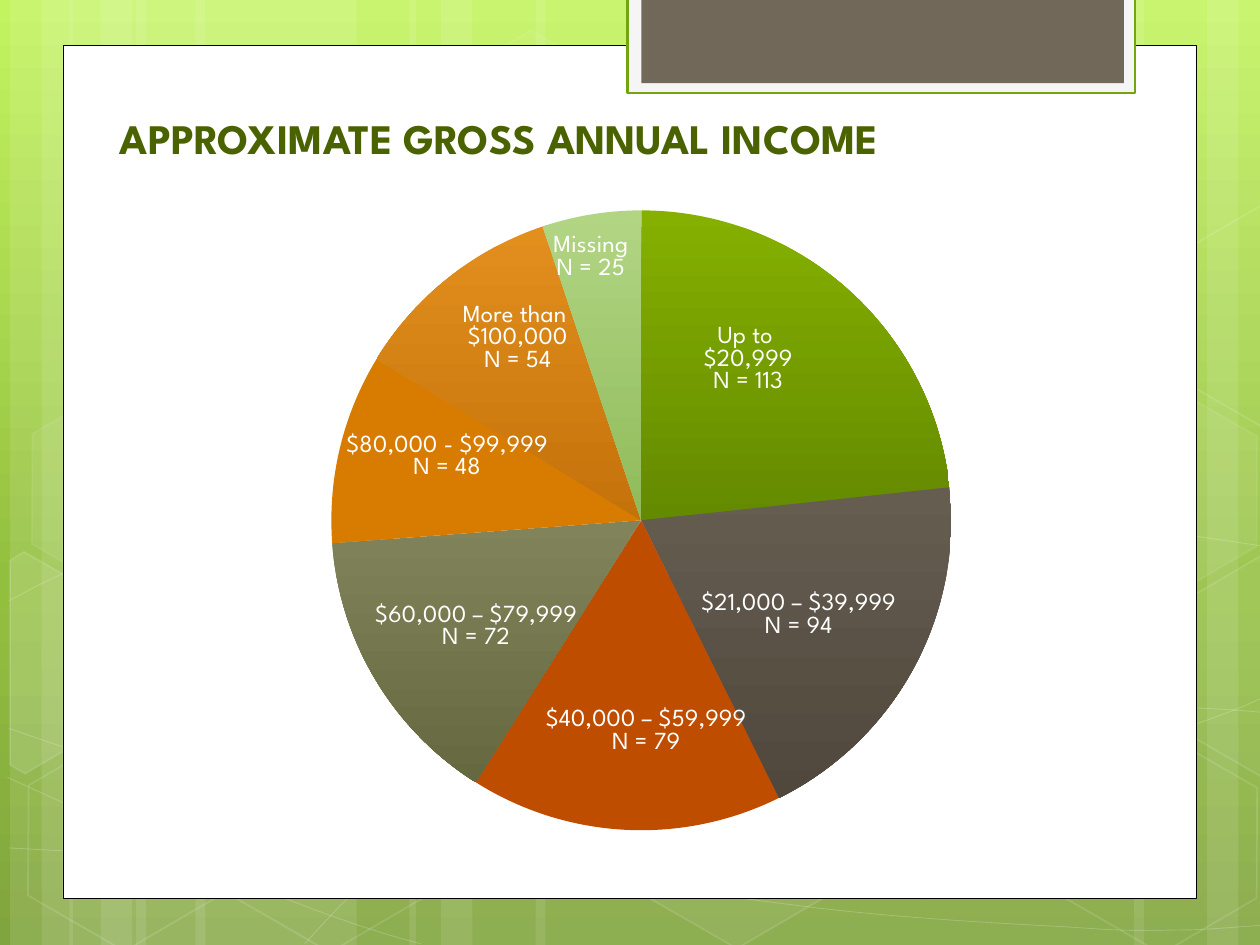
from copy import deepcopy
from itertools import accumulate
from math import cos, pi, sin
from pptx import Presentation, util as u
from pptx.chart.data import CategoryChartData
from pptx.dml.color import RGBColor
from pptx.enum import chart as ch, shapes, text
from pptx.oxml import parse_xml
from pptx.oxml.ns import nsdecls, qn

THEME = dict(font="League Spartan", title="4A6300", white="FFFFFF", black="000000",
             tab="71685A", tab_frame="F5F5F5", tab_line="74A510",
             background=[(0, "C3F35F"), (0.62, "93BF3F"), (1, "81A53E")],
             title_size=24, label_size=14, chart_size=10)
TITLE = "APPROXIMATE GROSS ANNUAL INCOME"

# category, count, label heading, slice colours top to bottom, label centre in inches
INCOME = [
    ("Up to $20,999", 113, "Up to \n$20,999", ["85B000", "648A00"], (5.94, 2.86)),
    ("$21,000 – $39,999", 94, "$21,000 – $39,999", ["665D51", "50483C"], (6.34, 4.89)),
    ("$40,000 – $59,999", 79, "$40,000 – $59,999", ["BF4D00"], (5.13, 5.81)),
    ("$60,000 – $79,999", 72, "$60,000 – $79,999", ["81845A", "666840"], (3.78, 4.98)),
    ("$80,000 - $99,999", 48, "$80,000 - $99,999", ["D77C01"], (3.55, 3.63)),
    ("More than $100,000", 54, "More than \n$100,000", ["E28F1E", "C4720A"], (4.11, 2.69)),
    ("Missing", 25, "Missing", ["B2D584", "90BB5A"], (4.69, 2.05)),
]
CHART_BOX = (0.17, 1.33, 9.67, 5.92)
PIE_CENTRE, PIE_RADIUS = (5.09, 4.13), 2.46

# left, width
STRIPES = [(1.08, 1.75), (0.08, 0.5), (0.33, 0.83), (1.55, 1.75), (0.55, 0.5), (0.8, 0.83),
           (7.33, 1.75), (9.58, 0.5), (9, 0.83), (4.25, 3.08), (3.25, 0.5), (3.5, 0.83)]
# start point, then cubic pieces: two control points and an end point
WAVES = [
    [(0.07, 6.73), (0.61, 6.76, 1.15, 6.79, 1.9, 6.78), (2.65, 6.77, 3.58, 6.75, 4.58, 6.65),
     (5.58, 6.55, 7, 6.36, 7.92, 6.17), (8.83, 5.98, 9.77, 5.68, 10.07, 5.51)],
    [(0.07, 4.77), (0.36, 4.61, 0.65, 4.46, 1.21, 4.31), (1.78, 4.16, 2.59, 3.94, 3.47, 3.87),
     (4.36, 3.8, 5.44, 3.79, 6.54, 3.87), (7.64, 3.95, 9.47, 4.26, 10.07, 4.34)],
    [(0.06, 6.17), (1.27, 6.72, 2.47, 7.27, 3.34, 7.49)],
    [(0.07, 5.78), (0.38, 5.89, 0.7, 6, 1.28, 6.16), (1.86, 6.31, 2.73, 6.56, 3.57, 6.73),
     (4.4, 6.9, 5.45, 7.08, 6.28, 7.18), (7.11, 7.29, 8, 7.33, 8.53, 7.36),
     (9.05, 7.4, 9.19, 7.38, 9.45, 7.38), (9.71, 7.37, 9.89, 7.35, 10.07, 7.34)],
    [(2.42, 7.49), (2.6, 7.29, 2.78, 7.09, 3.02, 6.91), (3.26, 6.73, 3.6, 6.53, 3.88, 6.39),
     (4.16, 6.25, 4.33, 6.19, 4.7, 6.09), (5.06, 5.99, 5.73, 5.85, 6.08, 5.78),
     (6.44, 5.71, 6.49, 5.71, 6.8, 5.69), (7.11, 5.66, 7.6, 5.63, 7.94, 5.62),
     (8.29, 5.61, 8.86, 5.62, 8.86, 5.62), (9.08, 5.62, 9.31, 5.62, 9.53, 5.62),
     (9.71, 5.63, 9.88, 5.64, 9.97, 5.65), (10.06, 5.66, 10.03, 5.65, 10.06, 5.66)],
]
# left, top, fill opacity, line opacity (percent)
HEXAGONS = [(3.34, 0.36, 4, 8), (4.97, 5.89, 6, 12), (0.11, 5.91, 0, 12), (0.14, 3.12, 7, 8),
            (1.74, 5.92, 0, 12), (7.53, 4.53, 10, 12), (8.34, 5.93, 0, 12), (8.34, 3.14, 7, 8)]
# outline, fill opacity
CUT_HEXAGONS = [
    ([(0.08, 4.45), (0.19, 4.38), (0.96, 4.82), (0.95, 5.7), (0.2, 6.14), (0.08, 6.07)], 10),
    ([(9.26, 4.85), (10.01, 4.41), (10.09, 4.46), (10.09, 6.13), (10.02, 6.17), (9.26, 5.73)], 4),
    ([(9.26, 2.07), (10.01, 1.63), (10.1, 1.68), (10.09, 3.35), (10.02, 3.39), (9.26, 2.95)], 0),
]
# box, fill, line colour, line width
PANELS = [((0.5, 0.36, 9, 6.77), "white", "black", 0.5),
          ((4.98, -0.02, 4.03, 0.76), "tab_frame", "tab_line", 1.25),
          ((5.09, -0.02, 3.83, 0.68), "tab", None, 0)]


def inches(values):
    return [u.Inches(v) for v in values]


def paint(fill, color, opacity=100):
    if not opacity:
        fill.background()
        return
    fill.solid()
    fill.fore_color.rgb = RGBColor.from_string(color)
    if opacity < 100:
        clr = fill._xPr.find(".//" + qn("a:srgbClr"))
        clr.append(parse_xml(f'<a:alpha {nsdecls("a")} val="{opacity * 1000}"/>'))


def paint_down(fill, stops):
    """Fill with a gradient from top to bottom; stops are (position, colour)."""
    fill.gradient()
    fill.gradient_angle = 270
    gs_list = fill._xPr.find(".//" + qn("a:gsLst"))
    for _ in stops[2:]:
        gs_list.append(deepcopy(gs_list[0]))
    for stop, (position, color) in zip(fill.gradient_stops, stops):
        stop.position = position
        stop.color.rgb = RGBColor.from_string(color)


def style(sp, fill, fill_opacity, line, width, line_opacity=100):
    sp.shadow.inherit = False
    paint(sp.fill, fill, fill_opacity)
    if line:
        paint(sp.line.fill, line, line_opacity)
        sp.line.width = u.Pt(width)
    else:
        sp.line.fill.background()


def add_outline(s, points, close):
    points = [inches(p) for p in points]
    builder = s.shapes.build_freeform(*points[0], scale=1)
    builder.add_line_segments(points[1:], close=close)
    return builder.convert_to_shape()


def add_wave(s, wave):
    """Lay out all control points as a polyline, then join each three into a cubic curve."""
    points = wave[:1] + [piece[i:i + 2] for piece in wave[1:] for i in (0, 2, 4)]
    sp = add_outline(s, points, False)
    lines = list(sp._element.iter(qn("a:lnTo")))
    for first, second, third in zip(lines[::3], lines[1::3], lines[2::3]):
        curve = parse_xml(f'<a:cubicBezTo {nsdecls("a")}/>')
        first.addprevious(curve)
        for line in (first, second, third):
            curve.append(line[0])
            line.getparent().remove(line)
    return sp


def add_decor(s):
    white = THEME["white"]
    paint_down(s.background.fill, THEME["background"])
    for left, width in STRIPES:
        sp = s.shapes.add_shape(shapes.MSO_SHAPE.RECTANGLE, *inches((left, 0, width, 7.5)))
        style(sp, white, 10, None, 0)
    for wave in WAVES:
        style(add_wave(s, wave), white, 0, white, 0.5, 20)
    for left, top, opacity, line_opacity in HEXAGONS:
        sp = s.shapes.add_shape(shapes.MSO_SHAPE.HEXAGON, *inches((left, top, 1.75, 1.52)))
        sp.adjustments[0] = 0.285
        sp.rotation = 30
        style(sp, white, opacity, white, 1, line_opacity)
    for outline, opacity in CUT_HEXAGONS:
        style(add_outline(s, outline, True), white, opacity, white, 1, 12)
    for box, fill, line, width in PANELS:
        sp = s.shapes.add_shape(shapes.MSO_SHAPE.RECTANGLE, *inches(box))
        style(sp, THEME[fill], 100, THEME.get(line), width)


def set_font(font, size, color):
    font.name, font.size = THEME["font"], u.Pt(size)
    font.color.rgb = RGBColor.from_string(color)


def add_title(s):
    tf = s.shapes.add_textbox(*inches((0.17, 0.59, 7.58, 0.75))).text_frame
    tf.word_wrap = True
    tf.vertical_anchor = text.MSO_ANCHOR.BOTTOM
    p = tf.paragraphs[0]
    p.text, p.alignment = TITLE, text.PP_ALIGN.CENTER
    set_font(p.font, THEME["title_size"], THEME["title"])
    p.font.bold = True


def manual_layout(**settings):
    items = "".join(f'<c:{name} val="{value}"/>' for name, value in settings.items())
    return parse_xml(f'<c:layout {nsdecls("c")}><c:manualLayout>{items}</c:manualLayout></c:layout>')


def add_label(point, content, centre, angle):
    """Place a label by its offset from the middle of the slice."""
    dl = point.data_label
    dl.text_frame.text = content
    for p in dl.text_frame.paragraphs:
        for r in p.runs:
            set_font(r.font, THEME["label_size"], THEME["white"])
    dl.position = ch.XL_LABEL_POSITION.CENTER
    x = PIE_CENTRE[0] + PIE_RADIUS / 2 * sin(angle)
    y = PIE_CENTRE[1] - PIE_RADIUS / 2 * cos(angle)
    dl._dLbl.insert(1, manual_layout(x=round((centre[0] - x) / CHART_BOX[2], 4),
                                     y=round((centre[1] - y) / CHART_BOX[3], 4)))


def add_pie(s):
    counts = [row[1] for row in INCOME]
    data = CategoryChartData()
    data.categories = [row[0] for row in INCOME]
    data.add_series("Series 1", counts)
    chart = s.shapes.add_chart(ch.XL_CHART_TYPE.PIE, *inches(CHART_BOX), data).chart
    chart.has_legend = chart.has_title = False
    set_font(chart.font, THEME["chart_size"], THEME["black"])
    plot = chart.plots[0]
    plot.vary_by_categories = True
    area = chart._chartSpace.chart.plotArea
    for old in area.findall(qn("c:layout")):
        area.remove(old)
    left, top, width, height = CHART_BOX
    area.insert(0, manual_layout(layoutTarget="inner", xMode="edge", yMode="edge",
                                 x=(PIE_CENTRE[0] - PIE_RADIUS - left) / width,
                                 y=(PIE_CENTRE[1] - PIE_RADIUS - top) / height,
                                 w=2 * PIE_RADIUS / width, h=2 * PIE_RADIUS / height))
    labels = plot.series[0].data_labels
    labels.show_value = labels.show_category_name = True
    set_font(labels.font, THEME["label_size"], THEME["white"])
    for i, (row, end) in enumerate(zip(INCOME, accumulate(counts))):
        _, count, heading, colors, centre = row
        point = plot.series[0].points[i]
        if len(colors) == 1:
            paint(point.format.fill, colors[0])
        else:
            paint_down(point.format.fill, list(enumerate(colors)))
        point.format.line.fill.background()
        add_label(point, f"{heading}\nN = {count}", centre, 2 * pi * (end - count / 2) / sum(counts))


prs = Presentation()
prs.slide_width, prs.slide_height = inches((10, 7.5))
s = prs.slides.add_slide(prs.slide_layouts[6])
add_decor(s)
add_title(s)
add_pie(s)
prs.save("out.pptx")
